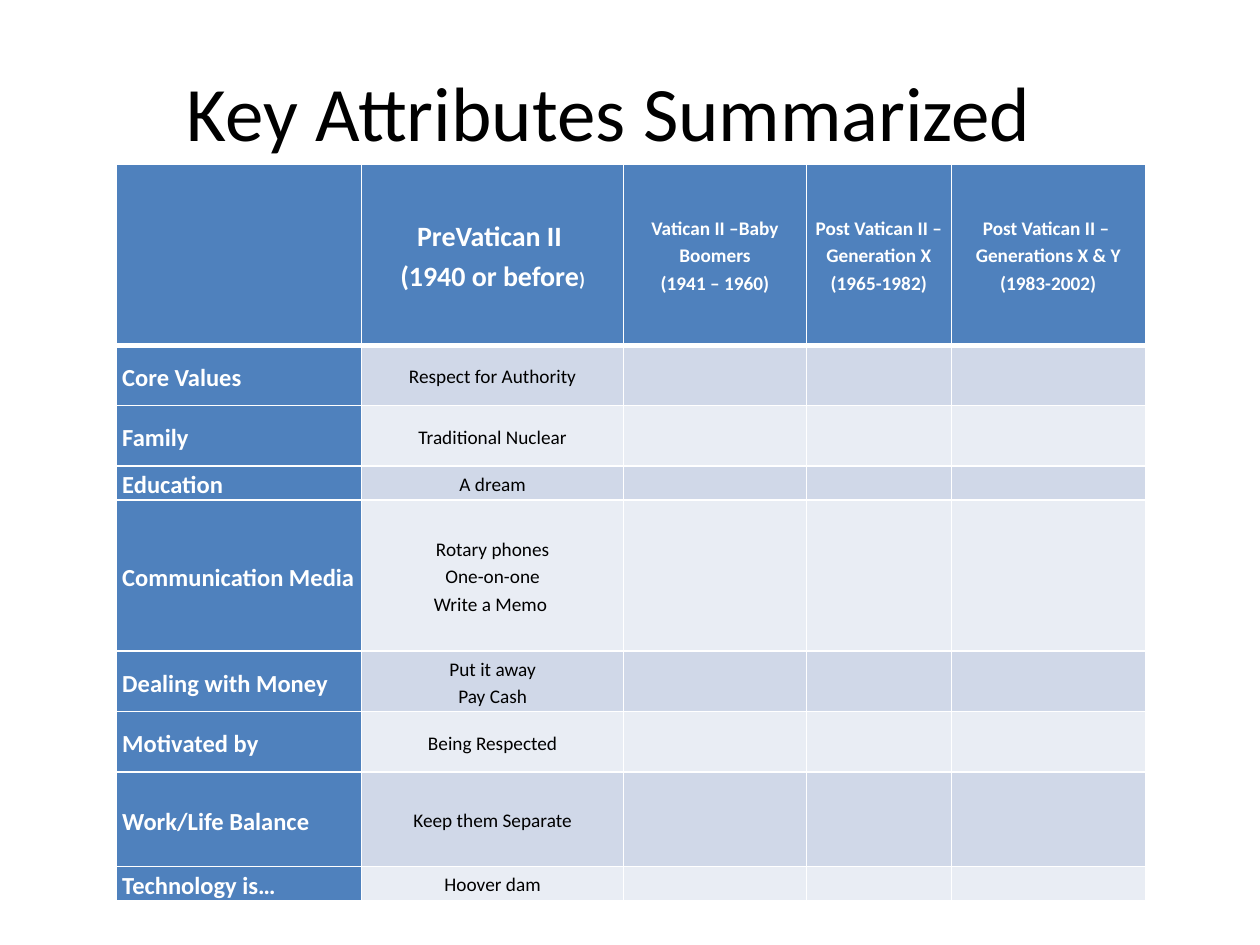
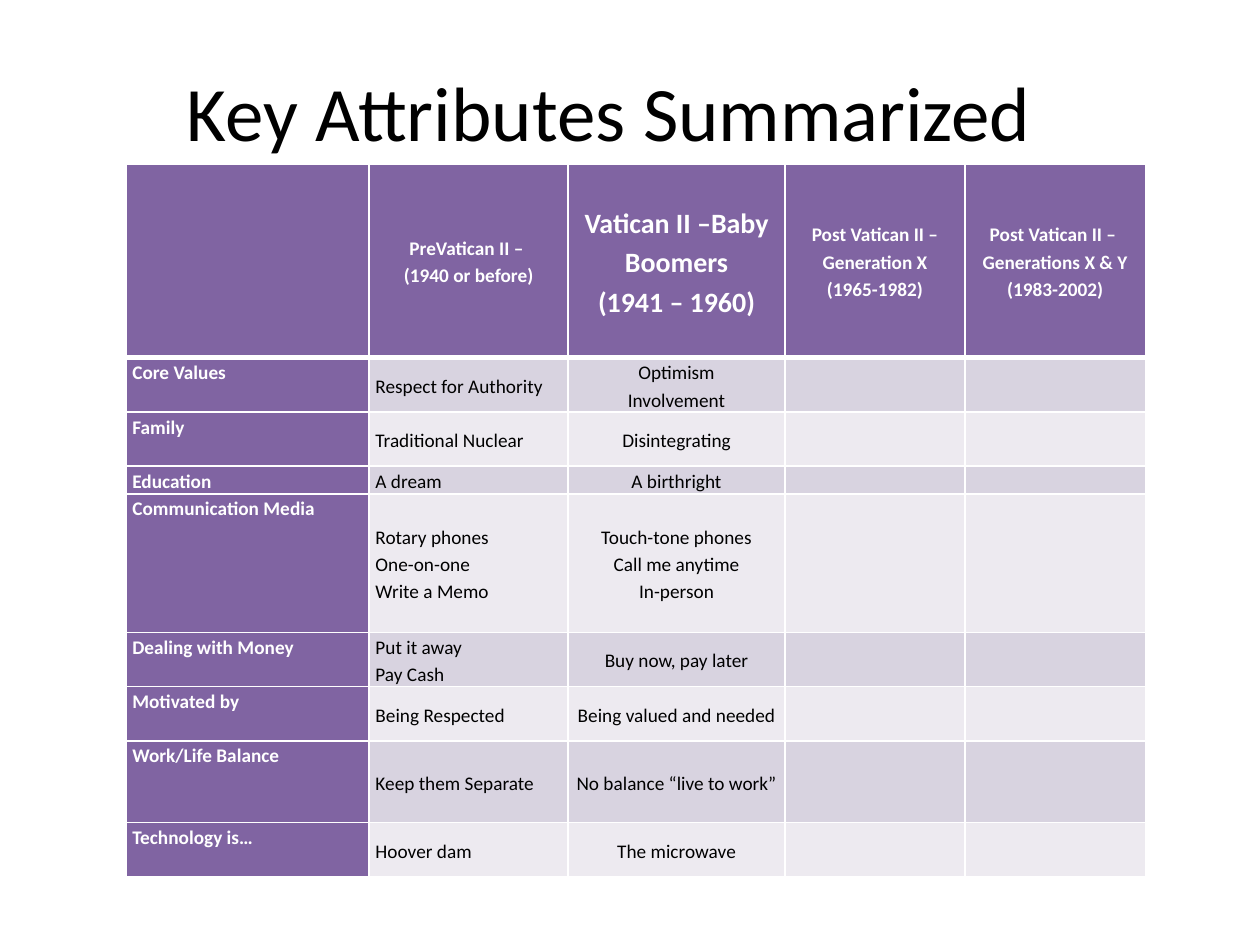
import dataclasses

import lxml.etree
import pptx
import pptx.dml.color
import pptx.enum.text
import pptx.oxml.ns
import pptx.util

Inches = pptx.util.Inches
Pt = pptx.util.Pt
CENTER = pptx.enum.text.PP_ALIGN.CENTER
LEFT = pptx.enum.text.PP_ALIGN.LEFT
TOP = pptx.enum.text.MSO_ANCHOR.TOP
MIDDLE = pptx.enum.text.MSO_ANCHOR.MIDDLE


@dataclasses.dataclass(frozen=True)
class Theme:
    font: str = "Calibri"
    black: str = "000000"
    white: str = "FFFFFF"
    # Main colour, then the darker and lighter row bands
    blue: tuple = ("4F81BD", "D0D8E8", "E9EDF4")
    purple: tuple = ("8064A2", "D8D3E0", "EDEAF0")
    title_size: int = 44
    focus_size: int = 16
    label_size: int = 14
    body_size: int = 11
    line_spacing: float = 1.15
    rule: int = 1
    header_rule: int = 3


THEME = Theme()

# Content shared by both tables
TITLE = "Key Attributes Summarized"
ATTRIBUTES = ["Core Values", "Family", "Education", "Communication Media",
              "Dealing with Money", "Motivated by", "Work/Life Balance", "Technology is…"]
PRE_VATICAN = [["Respect for Authority"], ["Traditional Nuclear"], ["A dream"],
               ["Rotary phones", "One-on-one", "Write a Memo "],
               ["Put it away", "Pay Cash"], ["Being Respected"],
               ["Keep them Separate"], ["Hoover dam"]]
BOOMERS = [["Optimism", "Involvement"], ["Disintegrating"], ["A birthright"],
           ["Touch-tone phones", "Call me anytime", "In-person"],
           ["Buy now, pay later"], ["Being valued and needed"],
           ["No balance “live to work”"], ["The microwave"]]
BOOMERS_HEADING = ["Vatican II –Baby Boomers", "(1941 – 1960)"]
LATER_HEADINGS = [["Post Vatican II –", "Generation X", "(1965-1982)"],
                  ["Post Vatican II – ", "Generations X & Y", "(1983-2002)"]]


def rgb(value):
    return pptx.dml.color.RGBColor.from_string(value)


def write_text(frame, lines, size, color=THEME.black, bold=False, align=LEFT, spacing=None):
    """Write one paragraph per line; a line is a string or a list of (text, size) pieces."""
    for index, line in enumerate(lines):
        paragraph = frame.paragraphs[0] if index == 0 else frame.add_paragraph()
        paragraph.alignment = align
        paragraph.line_spacing = spacing
        for text, piece_size in [(line, size)] if isinstance(line, str) else line:
            run = paragraph.add_run()
            run.text = text
            run.font.name = THEME.font
            run.font.size = Pt(piece_size)
            run.font.bold = bold
            run.font.color.rgb = rgb(color)


def keep_small(cell):
    """Stop an empty cell from stretching its row."""
    end = lxml.etree.SubElement(cell.text_frame.paragraphs[0]._p,
                                pptx.oxml.ns.qn("a:endParaRPr"))
    end.set("sz", str(THEME.body_size * 100))


def draw_borders(cell, top, bottom):
    properties = cell._tc.get_or_add_tcPr()
    sides = {"L": THEME.rule, "R": THEME.rule, "T": top, "B": bottom}
    for side, width in sides.items():
        line = lxml.etree.SubElement(properties, pptx.oxml.ns.qn(f"a:ln{side}"), w=str(Pt(width)))
        fill = lxml.etree.SubElement(line, pptx.oxml.ns.qn("a:solidFill"))
        lxml.etree.SubElement(fill, pptx.oxml.ns.qn("a:srgbClr"), val=THEME.white)


def add_title(slide, left, top, width, height):
    box = slide.shapes.add_textbox(Inches(left), Inches(top), Inches(width), Inches(height))
    box.text_frame.word_wrap = True
    box.text_frame.auto_size = pptx.enum.text.MSO_AUTO_SIZE.SHAPE_TO_FIT_TEXT
    write_text(box.text_frame, [TITLE], THEME.title_size, align=CENTER)


def add_attribute_table(slide, left, top, widths, heights, colors, headings, answers,
                        focus, label_size, label_anchor, answer_aligns):
    """Headings over attribute labels and answers; the focus column has a large heading."""
    main, *bands = colors
    table = slide.shapes.add_table(len(heights), len(widths), Inches(left), Inches(top),
                                   Inches(sum(widths)), Inches(sum(heights))).table
    for column, width in zip(table.columns, widths):
        column.width = Inches(width)
    for row, height in zip(table.rows, heights):
        row.height = Inches(height)

    for r in range(len(heights)):
        for c in range(len(widths)):
            cell = table.cell(r, c)
            cell.margin_left = cell.margin_right = Inches(0.05)
            cell.margin_top = cell.margin_bottom = 0
            cell.vertical_anchor = label_anchor if c == 0 else MIDDLE
            draw_borders(cell, THEME.header_rule if r == 1 else THEME.rule,
                         THEME.header_rule if r == 0 else THEME.rule)
            cell.fill.solid()
            cell.fill.fore_color.rgb = rgb(main if r == 0 or c == 0 else bands[(r - 1) % 2])

            style = {"size": THEME.body_size, "spacing": THEME.line_spacing}
            lines = []
            if r == 0 and c > 0:
                # Generation heading
                lines = headings[c - 1]
                style.update(color=THEME.white, bold=True, align=CENTER)
                if c == focus:
                    style["size"] = THEME.focus_size
            elif r > 0 and c == 0:
                # Attribute label
                lines = [ATTRIBUTES[r - 1]]
                style.update(size=label_size, color=THEME.white, bold=True)
            elif r > 0 and c <= len(answers):
                # Answer of this generation
                lines = answers[c - 1][r - 1]
                style["align"] = answer_aligns[c - 1]
            if lines:
                write_text(cell.text_frame, lines, **style)
            else:
                keep_small(cell)


def add_summary_slide(deck, **table):
    slide = deck.slides.add_slide(deck.slide_layouts[6])
    add_title(slide, 0.92, 0.46, 7.83, 0.84)
    add_attribute_table(slide, top=1.3, **table)


def main():
    deck = pptx.Presentation()
    deck.slide_width, deck.slide_height = Inches(10), Inches(7.5)

    # Generation before the council
    closing = [("(1940 or before", THEME.focus_size), (")", THEME.body_size)]
    add_summary_slide(
        deck, left=0.92, colors=THEME.blue,
        widths=[1.95, 2.08, 1.45, 1.15, 1.54],
        heights=[1.44, 0.48, 0.48, 0.26, 1.2, 0.48, 0.48, 0.75, 0.26],
        headings=[["PreVatican II ", closing], BOOMERS_HEADING, *LATER_HEADINGS],
        answers=[PRE_VATICAN], focus=1, label_size=THEME.label_size,
        label_anchor=MIDDLE, answer_aligns=[CENTER])

    # Baby boomers
    add_summary_slide(
        deck, left=1, colors=THEME.purple,
        widths=[1.93, 1.58, 1.72, 1.43, 1.43],
        heights=[1.54, 0.43, 0.43, 0.22, 1.1, 0.43, 0.43, 0.65, 0.43],
        headings=[["PreVatican II – ", "(1940 or before)"], BOOMERS_HEADING, *LATER_HEADINGS],
        answers=[PRE_VATICAN, BOOMERS], focus=2, label_size=THEME.body_size,
        label_anchor=TOP, answer_aligns=[LEFT, CENTER])

    deck.save("out.pptx")


if __name__ == "__main__":
    main()
